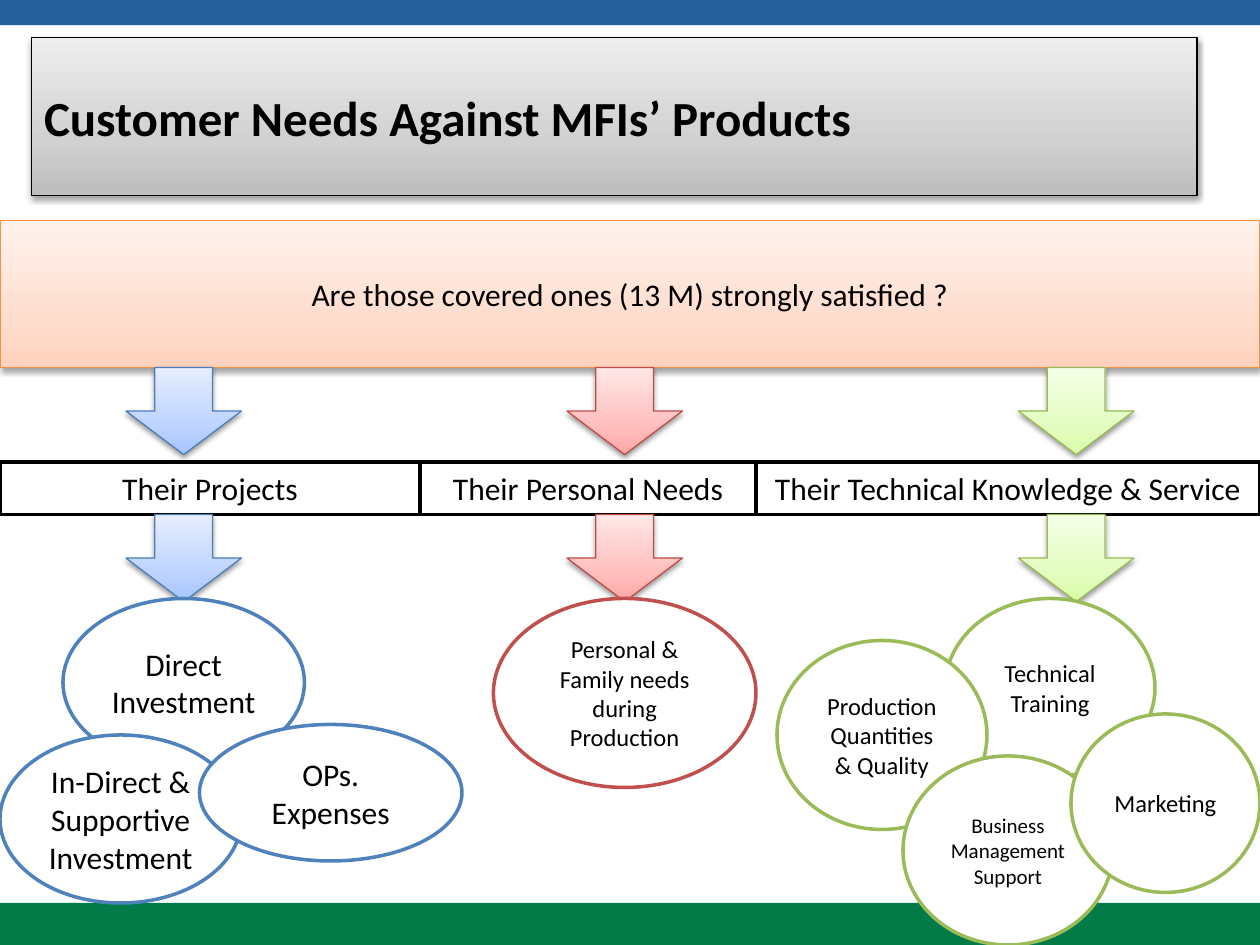
from lxml.etree import SubElement
from pptx import Presentation
from pptx.dml.color import RGBColor
from pptx.enum.shapes import MSO_SHAPE as Shape
from pptx.enum.text import MSO_ANCHOR as Anchor, PP_ALIGN as Align
from pptx.oxml.ns import qn
from pptx.util import Pt

PX = 7620  # EMU per px, 120 px to the inch
WIDTH, HEIGHT = 1200, 900
FONT = "Calibri"

COLORS = {
    "black": "000000", "white": "FFFFFF",
    "top bar": "275F9D", "bottom bar": "027B49",
    "blue": "4F81BD", "red": "C0504D", "green": "9BBB59",
    "blue edge": "4B7EBC", "red edge": "BF4C48", "green edge": "98B955",
    "orange edge": "F69240",
}
# Gradient stops from the bottom (0 %) to the top (100 %)
GRADIENTS = {
    "gray": ("BDBDBD", "D1D1D1", "EEEEEE"),
    "orange": ("FFD2BD", "FFDED0", "FFF2ED"),
    "blue": ("A4C4FF", "BFD4FF", "E6EEFF"),
    "red": ("FFA6A5", "FFC0BF", "FFE7E7"),
    "green": ("DAFDA7", "E4FCC2", "F5FFE7"),
}
STOPS = (0, 35, 100)

ARROW_COLUMNS = ((120, "blue"), (540, "red"), (970, "green"))
ARROW_ROWS = (350, 490)
HEADINGS = (
    ("Their Projects", 400),
    ("Their Personal Needs", 320),
    ("Their Technical Knowledge & Service", 480),
)
# Text, left, top, width, height, outline, font size; back to front
NEEDS = (
    ("Direct Investment", 60, 570, 230, 160, "blue", 18),
    ("In-Direct & Supportive Investment", 0, 700, 230, 160, "blue", 18),
    ("Personal & Family needs during Production", 470, 570, 250, 180, "red", 14),
    ("Technical Training", 900, 570, 200, 170, "green", 14),
    ("Production Quantities & Quality", 740, 610, 200, 180, "green", 14),
    ("Business Management Support", 860, 720, 200, 180, "green", 12),
    ("Marketing", 1020, 680, 180, 170, "green", 14),
    ("OPs. Expenses", 190, 690, 250, 130, "blue", 18),
)


def color(name):
    return RGBColor.from_string(COLORS[name])


def add_solid(page, kind, area, fill, edge=None):
    """Add a flat shape, outlined if an edge colour is given."""
    shape = page.shapes.add_shape(kind, *(length * PX for length in area))
    shape.shadow.inherit = False
    shape.fill.solid()
    shape.fill.fore_color.rgb = color(fill)
    if edge:
        shape.line.color.rgb = color(edge)
        shape.line.width = Pt(2)
    else:
        shape.line.fill.background()
    return shape


def add_color(parent, value):
    return SubElement(parent, qn("a:srgbClr"), val=value)


def style_raised(shape, gradient, edge):
    """Give a shape a three-stop gradient, a thin outline and a soft shadow."""
    shape.fill.gradient()
    shape.fill.gradient_angle = 90
    properties = shape._element.spPr
    stops = properties.find(qn("a:gradFill")).find(qn("a:gsLst"))
    stops.clear()
    for percent, value in zip(STOPS, GRADIENTS[gradient]):
        add_color(SubElement(stops, qn("a:gs"), pos=str(percent * 1000)), value)
    shape.line.color.rgb = color(edge)
    shape.line.width = Pt(0.75)
    shape.shadow.inherit = False
    shadow = SubElement(properties.find(qn("a:effectLst")), qn("a:outerShdw"),
                        blurRad="40000", dist="20000", dir="5400000",
                        rotWithShape="0")
    SubElement(add_color(shadow, COLORS["black"]), qn("a:alpha"), val="38000")


def add_raised(page, kind, area, gradient, edge):
    shape = page.shapes.add_shape(kind, *(length * PX for length in area))
    style_raised(shape, gradient, edge)
    return shape


def write(shape, text, size, align=Align.CENTER, bold=False):
    frame = shape.text_frame
    frame.word_wrap = True
    frame.vertical_anchor = Anchor.MIDDLE
    para = frame.paragraphs[0]
    para.text = text
    para.alignment = align
    para.font.name = FONT
    para.font.size = Pt(size)
    para.font.bold = bold
    para.font.color.rgb = color("black")


def set_title(page, text):
    title = page.shapes.title
    title.left, title.top = 30 * PX, 36 * PX
    title.width, title.height = 1110 * PX, 150 * PX
    style_raised(title, "gray", "black")
    write(title, text, 28, Align.LEFT, bold=True)


def add_arrows(page, top):
    for left, name in ARROW_COLUMNS:
        add_raised(page, Shape.DOWN_ARROW, (left, top, 110, 83),
                   name, f"{name} edge")


def add_headings(page):
    left = 0
    for text, width in HEADINGS:
        box = add_solid(page, Shape.RECTANGLE, (left, 440, width, 50),
                        "white", "black")
        write(box, text, 18)
        left += width


def main():
    deck = Presentation()
    deck.slide_width, deck.slide_height = WIDTH * PX, HEIGHT * PX
    page = deck.slides.add_slide(deck.slide_layouts[5])

    # Bars at the page edges
    add_solid(page, Shape.RECTANGLE, (0, 0, WIDTH, 24), "top bar")
    add_solid(page, Shape.RECTANGLE, (0, 860, WIDTH, 40), "bottom bar")

    # Title and question
    set_title(page, "Customer Needs Against MFIs’ Products")
    question = add_raised(page, Shape.RECTANGLE, (0, 210, WIDTH, 140),
                          "orange", "orange edge")
    write(question, "Are those covered ones (13 M) strongly satisfied ?", 18)

    # Arrows above and below the headings
    add_arrows(page, ARROW_ROWS[0])
    add_headings(page)
    add_arrows(page, ARROW_ROWS[1])

    # Needs under each heading
    for text, left, top, width, height, edge, size in NEEDS:
        need = add_solid(page, Shape.OVAL, (left, top, width, height),
                         "white", edge)
        write(need, text, size)

    deck.save("out.pptx")


if __name__ == "__main__":
    main()
